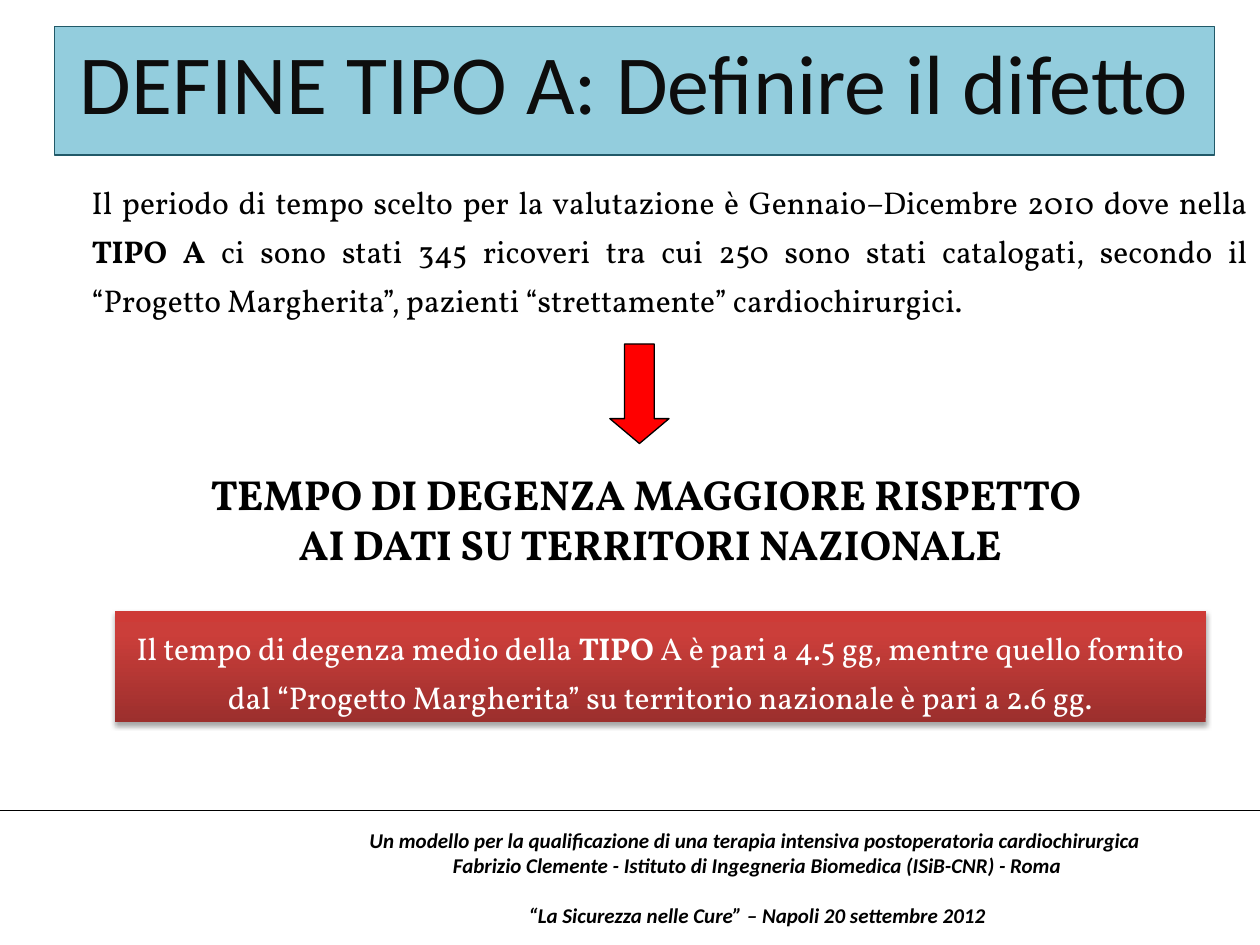
from copy import deepcopy

from lxml import etree
from pptx import Presentation
from pptx.dml.color import RGBColor
from pptx.enum.shapes import MSO_CONNECTOR, MSO_SHAPE
from pptx.enum.text import MSO_ANCHOR, PP_ALIGN
from pptx.oxml.ns import qn
from pptx.util import Inches, Pt

RECTANGLE, DOWN_ARROW = MSO_SHAPE.RECTANGLE, MSO_SHAPE.DOWN_ARROW
STRAIGHT = MSO_CONNECTOR.STRAIGHT
TOP, MIDDLE = MSO_ANCHOR.TOP, MSO_ANCHOR.MIDDLE
CENTER, JUSTIFY = PP_ALIGN.CENTER, PP_ALIGN.JUSTIFY

COLORS = {
    "black": "000000", "white": "FFFFFF", "title_text": "0D0D0D",
    "title_fill": "93CDDD", "title_line": "215968", "arrow": "FF0000",
    "red_dark": "9C2F2D", "red_mid": "CB3E3A", "red_light": "CE3B37",
}


def rgb(name):
    return RGBColor.from_string(COLORS[name])


def write(shape, paragraphs, font, size, color="black", align=CENTER,
          anchor=TOP, spacing=None, bold=None, italic=None):
    """Fill a shape with paragraphs, each a list of (text, bold) runs."""
    frame = shape.text_frame
    frame.word_wrap = True
    frame.vertical_anchor = anchor
    for i, runs in enumerate(paragraphs):
        paragraph = frame.add_paragraph() if i else frame.paragraphs[0]
        paragraph.alignment = align
        if spacing:
            paragraph.line_spacing = spacing
        paragraph.font.name = font
        paragraph.font.size = Pt(size)
        paragraph.font.color.rgb = rgb(color)
        paragraph.font.bold = bold
        paragraph.font.italic = italic
        for text, run_bold in runs:
            run = paragraph.add_run()
            run.text = text
            if run_bold:
                run.font.bold = True


prs = Presentation()
prs.slide_width, prs.slide_height = Inches(10), Inches(7.5)
slide = prs.slides.add_slide(prs.slide_layouts[6])
shapes = slide.shapes

# Footer rule
footer_rule = shapes.add_connector(STRAIGHT, 0, Inches(6.43), Inches(10), Inches(6.43))
footer_rule.line.color.rgb = rgb("black")
footer_rule.line.width = Pt(0.75)
etree.SubElement(footer_rule._element.spPr, qn("a:effectLst"))

# Evaluation period
period = shapes.add_textbox(Inches(0.63), Inches(1.31), Inches(9.37), Inches(1.25))
write(period, [[
    ("Il periodo di tempo scelto per la valutazione è Gennaio–Dicembre 2010 dove nella ", False),
    ("TIPO A", True),
    (" ci sono stati 345 ricoveri tra cui 250 sono stati catalogati, secondo il "
     "“Progetto Margherita”, pazienti “strettamente” cardiochirurgici.", False),
]], "Vollkorn", 18, align=JUSTIFY, spacing=1.3)

# Finding
finding = shapes.add_textbox(Inches(0.83), Inches(3.67), Inches(8.66), Inches(0.9))
write(finding, [
    [("TEMPO DI DEGENZA MAGGIORE RISPETTO ", False)],
    [("AI DATI SU TERRITORI NAZIONALE", False)],
], "Vollkorn", 24, bold=True)

# Comparison of stays: red gradient from bottom to top, soft shadow below
comparison = shapes.add_shape(RECTANGLE, Inches(0.91), Inches(4.85), Inches(8.66), Inches(0.88))
comparison.line.fill.background()
comparison.fill.gradient()
comparison.fill.gradient_angle = 90
stop_list = comparison._element.spPr.find(".//" + qn("a:gsLst"))
stop_list.append(deepcopy(stop_list[-1]))
gradient = [(0, "red_dark"), (0.8, "red_mid"), (1, "red_light")]
for stop, (position, color) in zip(comparison.fill.gradient_stops, gradient):
    stop.position = position
    stop.color.rgb = rgb(color)
comparison.shadow.inherit = False
effects = comparison._element.spPr.find(qn("a:effectLst"))
shadow = etree.SubElement(effects, qn("a:outerShdw"), blurRad=str(Pt(3.1)),
                          dist=str(Pt(1.8)), dir="5400000", rotWithShape="0")
shadow_color = etree.SubElement(shadow, qn("a:srgbClr"), val=COLORS["black"])
etree.SubElement(shadow_color, qn("a:alpha"), val="35000")
write(comparison, [[
    ("Il tempo di degenza medio della ", False),
    ("TIPO ", True),
    ("A è pari a 4.5 gg, mentre quello fornito dal “Progetto Margherita” "
     "su territorio nazionale è pari a 2.6 gg.", False),
]], "Vollkorn", 18, color="white", spacing=1.3)

# Arrow from period to finding
arrow = shapes.add_shape(DOWN_ARROW, Inches(4.84), Inches(2.73), Inches(0.47), Inches(0.79))
arrow.adjustments[0] = 0.5
arrow.adjustments[1] = 0.42

# Title bar
title = shapes.add_shape(RECTANGLE, Inches(0.43), Inches(0.21), Inches(9.21), Inches(1.02))
write(title, [[("DEFINE TIPO A: Definire il difetto", False)]],
      "Calibri", 48, color="title_text", anchor=MIDDLE, spacing=0.8)

for shape, fill, line in [(arrow, "arrow", "black"), (title, "title_fill", "title_line")]:
    shape.shadow.inherit = False
    shape.fill.solid()
    shape.fill.fore_color.rgb = rgb(fill)
    shape.line.color.rgb = rgb(line)
    shape.line.width = Pt(0.75)

# Footer
footer = shapes.add_textbox(Inches(2.72), Inches(6.43), Inches(6.58), Inches(1.07))
write(footer, [
    [("Un modello per la qualificazione di una terapia intensiva postoperatoria cardiochirurgica ", False)],
    [("Fabrizio Clemente - Istituto di Ingegneria Biomedica (ISiB-CNR) - Roma", False)],
    [("“La Sicurezza nelle Cure” – Napoli 20 settembre 2012", False)],
], "Calibri", 12, anchor=MIDDLE, bold=True, italic=True)
footer.text_frame.paragraphs[-1].space_before = Pt(14.5)

prs.save("out.pptx")
